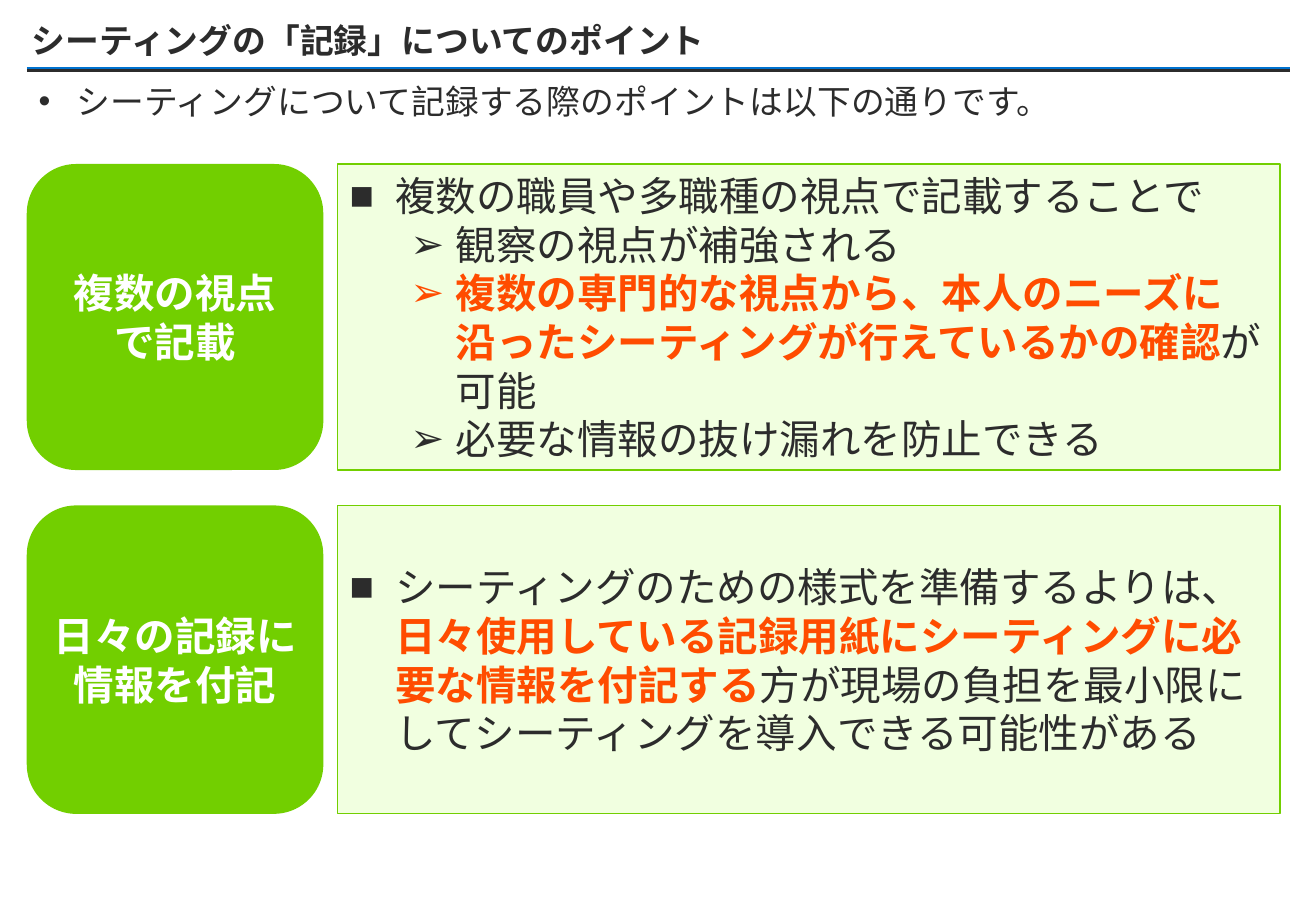
from dataclasses import dataclass

from lxml import etree
from pptx import Presentation
from pptx.dml.color import RGBColor
from pptx.enum.shapes import MSO_CONNECTOR, MSO_SHAPE
from pptx.enum.text import MSO_ANCHOR, MSO_AUTO_SIZE, PP_ALIGN
from pptx.oxml.ns import qn
from pptx.util import Cm, Pt

STRAIGHT = MSO_CONNECTOR.STRAIGHT
RECTANGLE, ROUNDED = MSO_SHAPE.RECTANGLE, MSO_SHAPE.ROUNDED_RECTANGLE
MIDDLE, TOP = MSO_ANCHOR.MIDDLE, MSO_ANCHOR.TOP
LEFT, CENTER = PP_ALIGN.LEFT, PP_ALIGN.CENTER
FIXED = MSO_AUTO_SIZE.NONE


@dataclass(frozen=True)
class Theme:
    """Colours, font and type sizes of the slide."""
    ink: str = "2C2C2C"
    blue: str = "0072CF"
    green: str = "72CF00"
    pale: str = "E4FFC2"
    accent: str = "FF4C00"
    white: str = "FFFFFF"
    font: str = "Noto Sans CJK JP"
    small: int = 20
    large: int = 24


THEME = Theme()
PLAIN = {"size": Pt(THEME.large), "bold": False, "color": THEME.ink}
STRONG = PLAIN | {"bold": True, "color": THEME.accent}
LABEL = PLAIN | {"bold": True, "color": THEME.white}
LEAD = PLAIN | {"size": Pt(THEME.small)}
TITLE = LEAD | {"bold": True}

SQUARE = {"char": "■", "level": 0, "margin": Cm(0.95), "hang": Cm(0.95)}
ARROW = {"char": "➢", "level": 1, "margin": Cm(2.22), "hang": Cm(0.95)}
DOT = {"char": "•", "level": 0, "margin": Cm(0.79), "hang": Cm(0.79)}

BODY_SPACING = {"alignment": LEFT, "line_spacing": Pt(28.8)}
LEAD_SPACING = {"alignment": LEFT, "line_spacing": 0.9, "space_after": Pt(6)}
TITLE_SPACING = {"alignment": LEFT, "line_spacing": 0.9}
LABEL_SPACING = {"alignment": CENTER}

POINTS = [
    {"top": 3.43, "height": 6.4,
     "label": ["複数の視点", "で記載"],
     "body": [
         (SQUARE, [("複数の職員や多職種の視点で記載することで", PLAIN)]),
         (ARROW, [("観察の視点が補強される", PLAIN)]),
         (ARROW, [("複数の専門的な視点から、本人のニーズに沿ったシーティングが行えているかの確認", STRONG),
                  ("が可能", PLAIN)]),
         (ARROW, [("必要な情報の抜け漏れを防止できる", PLAIN)])]},
    {"top": 10.57, "height": 6.45,
     "label": ["日々の記録に情報を付記"],
     "body": [
         (SQUARE, [("シーティングのための様式を準備するよりは、", PLAIN),
                   ("日々使用している記録用紙にシーティングに必要な情報を付記する", STRONG),
                   ("方が現場の負担を最小限にしてシーティングを導入できる可能性がある", PLAIN)])]},
]


def set_attributes(target, values):
    """Set each named attribute of the target."""
    for name, value in values.items():
        setattr(target, name, value)


def add_bullet(para, bullet):
    """Give the paragraph a hanging bullet."""
    para.level = bullet["level"]
    properties = para._p.get_or_add_pPr()
    properties.set("marL", str(bullet["margin"]))
    properties.set("indent", str(-bullet["hang"]))
    etree.SubElement(properties, qn("a:buFont"), typeface="Arial")
    etree.SubElement(properties, qn("a:buChar"), char=bullet["char"])


def add_span(para, text, style):
    """Add a run of text in the given style."""
    span = para.add_run()
    span.text = text
    set_attributes(span.font, {"name": THEME.font, "size": style["size"], "bold": style["bold"]})
    span.font.color.rgb = RGBColor.from_string(style["color"])
    etree.SubElement(span._r.get_or_add_rPr(), qn("a:ea"), typeface=THEME.font)


def write(shape, paragraphs, spacing, **frame_values):
    """Fill the shape with paragraphs of a bullet and styled spans."""
    frame = shape.text_frame
    set_attributes(frame, {"word_wrap": True, "auto_size": FIXED} | frame_values)
    for index, (bullet, spans) in enumerate(paragraphs):
        para = frame.add_paragraph() if index else frame.paragraphs[0]
        set_attributes(para, spacing)
        if bullet:
            add_bullet(para, bullet)
        for text, style in spans:
            add_span(para, text, style)


def add_block(page, kind, box, fill):
    """Add a filled shape without shadow or outline."""
    block = page.shapes.add_shape(kind, *map(Cm, box))
    block.shadow.inherit = False
    block.fill.solid()
    block.fill.fore_color.rgb = RGBColor.from_string(fill)
    block.line.fill.background()
    return block


def add_heading(page, box):
    """Place the title and the double rule below it."""
    left, top, width, height = box
    title = page.shapes.title
    set_attributes(title, dict(zip(("left", "top", "width", "height"), map(Cm, box))))
    write(title, [(None, [("シーティングの「記録」についてのポイント", TITLE)])], TITLE_SPACING,
          vertical_anchor=MIDDLE, margin_left=Cm(0.1), margin_right=0,
          margin_top=Cm(0.13), margin_bottom=Cm(0.13))
    for offset, color, weight in ((0.02, THEME.blue, 1), (0.07, THEME.ink, 1.5)):
        level = Cm(top + height + offset)
        rule = page.shapes.add_connector(STRAIGHT, Cm(left), level, Cm(left + width), level)
        rule.line.color.rgb = RGBColor.from_string(color)
        rule.line.width = Pt(weight)
        etree.SubElement(rule._element.spPr, qn("a:effectLst"))


def add_lead(page, box):
    """Place the introductory sentence."""
    lead = page.shapes.add_textbox(*map(Cm, box))
    sentence = "シーティングについて記録する際のポイントは以下の通りです。"
    write(lead, [(DOT, [(sentence, LEAD)])], LEAD_SPACING, vertical_anchor=TOP)


def add_point(page, box, point):
    """Place a green label and its explanation side by side."""
    left, top, width, height = box
    label_width, gap = 6.2, 0.3
    offset = label_width + gap
    body = add_block(page, RECTANGLE, (left + offset, top, width - offset, height), THEME.pale)
    color = body.fill._xPr.find(qn("a:solidFill"))[0]
    etree.SubElement(color, qn("a:alpha"), val="50000")
    body.line.color.rgb = RGBColor.from_string(THEME.green)
    body.line.width = Pt(0.75)
    write(body, point["body"], BODY_SPACING, vertical_anchor=MIDDLE)
    label = add_block(page, ROUNDED, (left, top, label_width, height), THEME.green)
    lines = [(None, [(text, LABEL)]) for text in point["label"]]
    write(label, lines, LABEL_SPACING, vertical_anchor=MIDDLE)


def main():
    """Build and save the slide."""
    deck = Presentation()
    set_attributes(deck, {"slide_width": Cm(27.51), "slide_height": Cm(19.05)})
    page = deck.slides.add_slide(deck.slide_layouts[5])
    left = 0.56
    add_heading(page, (left, 0.38, 26.4, 1.02))
    add_lead(page, (left, 1.65, 26.4, 1.75))
    for point in POINTS:
        add_point(page, (left, point["top"], 26.2, point["height"]), point)
    deck.save("out.pptx")


if __name__ == "__main__":
    main()
